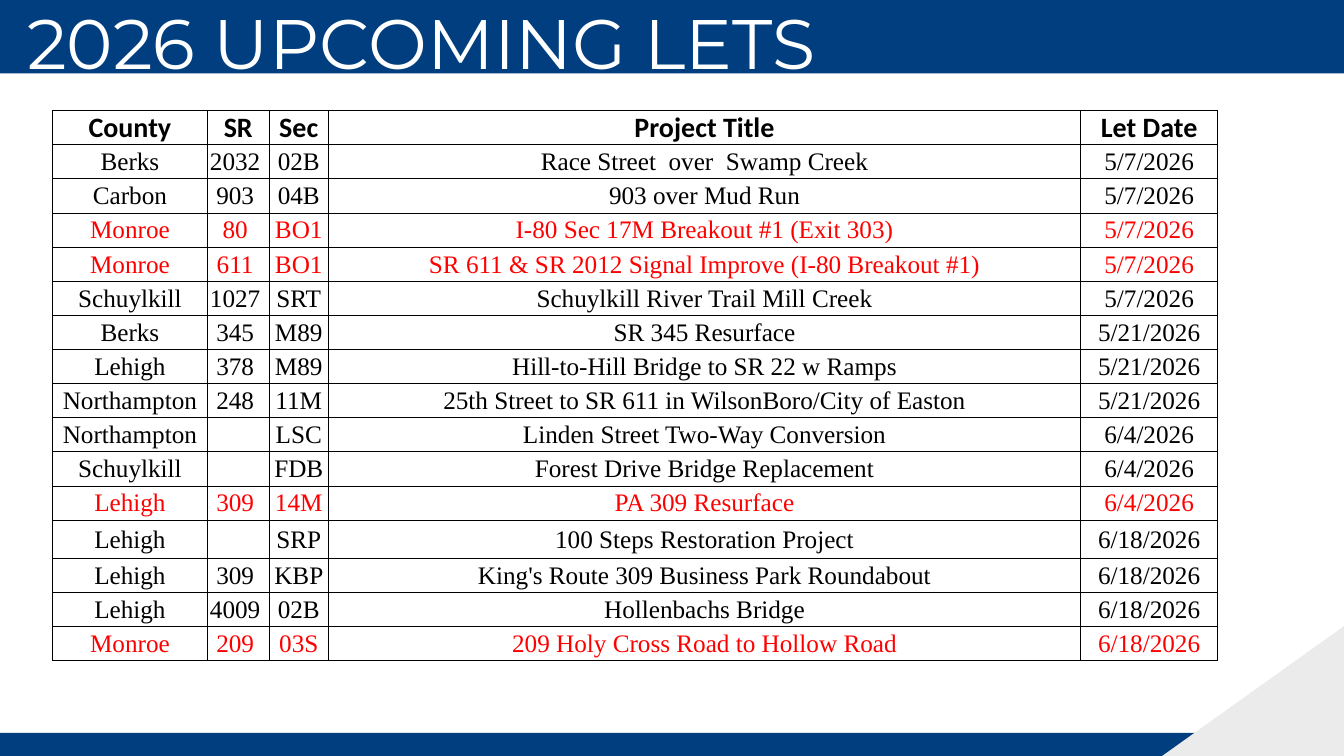
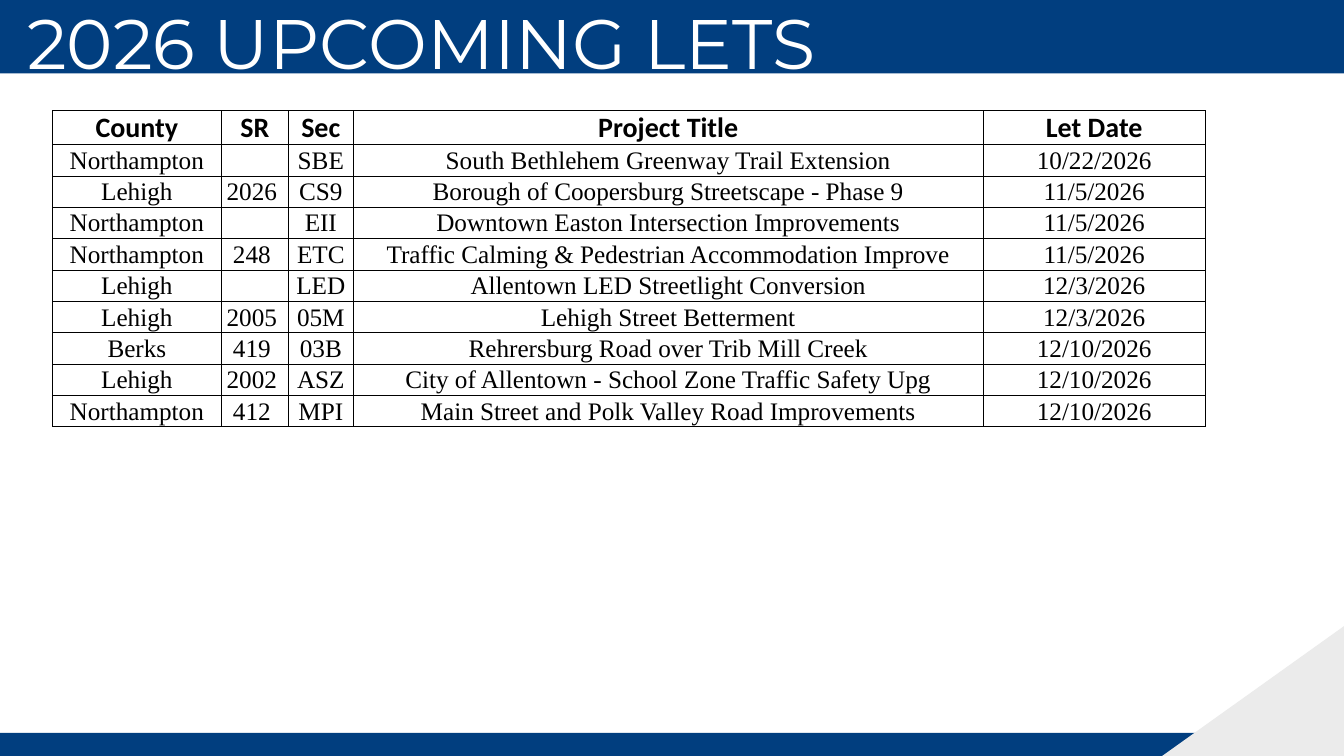
import pptx
import pptx.util
import pptx.dml.color
import pptx.enum.shapes
import pptx.enum.text
import pptx.oxml
import pptx.oxml.ns

Cm = pptx.util.Cm
Pt = pptx.util.Pt
ALIGN = pptx.enum.text.PP_ALIGN
ANCHOR = pptx.enum.text.MSO_ANCHOR
SHAPE = pptx.enum.shapes.MSO_SHAPE

COLORS = {"band": "013E7F", "corner": "EBEBEB", "title": "FFFFFF",
          "text": "000000", "highlight": "FF0000"}
WIDTH, HEIGHT = 33.87, 19.05
HEADER = ("County", "SR", "Sec", "Project Title", "Let Date")

SPRING_LETS = [
    ("Berks", "2032 ", "02B", "Race Street  over  Swamp Creek", "5/7/2026"),
    ("Carbon", "903 ", "04B", "903 over Mud Run", "5/7/2026"),
    ("Monroe", "80 ", "BO1", "I-80 Sec 17M Breakout #1 (Exit 303)", "5/7/2026"),
    ("Monroe", "611 ", "BO1", "SR 611 & SR 2012 Signal Improve (I-80 Breakout #1)", "5/7/2026"),
    ("Schuylkill", "1027 ", "SRT", "Schuylkill River Trail Mill Creek", "5/7/2026"),
    ("Berks", "345 ", "M89", "SR 345 Resurface", "5/21/2026"),
    ("Lehigh", "378 ", "M89", "Hill-to-Hill Bridge to SR 22 w Ramps", "5/21/2026"),
    ("Northampton", "248 ", "11M", "25th Street to SR 611 in WilsonBoro/City of Easton", "5/21/2026"),
    ("Northampton", "", "LSC", "Linden Street Two-Way Conversion", "6/4/2026"),
    ("Schuylkill", "", "FDB", "Forest Drive Bridge Replacement", "6/4/2026"),
    ("Lehigh", "309 ", "14M", "PA 309 Resurface", "6/4/2026"),
    ("Lehigh", "", "SRP", "100 Steps Restoration Project", "6/18/2026"),
    ("Lehigh", "309 ", "KBP", "King's Route 309 Business Park Roundabout", "6/18/2026"),
    ("Lehigh", "4009 ", "02B", "Hollenbachs Bridge", "6/18/2026"),
    ("Monroe", "209 ", "03S", "209 Holy Cross Road to Hollow Road", "6/18/2026"),
]
FALL_LETS = [
    ("Northampton", "", "SBE", "South Bethlehem Greenway Trail Extension", "10/22/2026"),
    ("Lehigh", "2026 ", "CS9", "Borough of Coopersburg Streetscape - Phase 9", "11/5/2026"),
    ("Northampton", "", "EII", "Downtown Easton Intersection Improvements", "11/5/2026"),
    ("Northampton", "248 ", "ETC", "Traffic Calming & Pedestrian Accommodation Improve", "11/5/2026"),
    ("Lehigh", "", "LED", "Allentown LED Streetlight Conversion", "12/3/2026"),
    ("Lehigh", "2005 ", "05M", "Lehigh Street Betterment", "12/3/2026"),
    ("Berks", "419 ", "03B", "Rehrersburg Road over Trib Mill Creek", "12/10/2026"),
    ("Lehigh", "2002 ", "ASZ", "City of Allentown - School Zone Traffic Safety Upg", "12/10/2026"),
    ("Northampton", "412 ", "MPI", "Main Street and Polk Valley Road Improvements", "12/10/2026"),
]


def rgb(name):
    return pptx.dml.color.RGBColor.from_string(COLORS[name])


def write(tf, text, size=18, font="Times New Roman", color="text", bold=False,
          align=ALIGN.CENTER, spacing=None):
    p = tf.paragraphs[0]
    p.alignment = align
    p.space_before = Pt(0)
    if spacing:
        p.line_spacing = spacing
    r = p.add_run()
    r.text = text
    r.font.size = Pt(size)
    r.font.name = font
    r.font.bold = bold
    r.font.color.rgb = rgb(color)


class Deck:
    """Holds the shared style and the slide being built."""

    def __init__(self):
        self.prs = pptx.Presentation()
        self.prs.slide_width, self.prs.slide_height = Cm(WIDTH), Cm(HEIGHT)
        self.layout = self.prs.slide_layouts[5]
        self.s = None

    def slide(self, title):
        first = self.s is None
        self.s = self.prs.slides.add_slide(self.layout)
        if first:
            self.backdrop()
        self.title(title)

    def backdrop(self):
        corner = self.shape(SHAPE.RIGHT_TRIANGLE, WIDTH - 4.58, HEIGHT - 3.27, 4.58, 3.27, "corner")
        corner.element.spPr.xfrm.set("flipH", "1")
        bands = [self.shape(SHAPE.RECTANGLE, 0, y, WIDTH, h, "band")
                 for y, h in ((HEIGHT - 0.58, 0.58), (0, 1.85))]
        for i, sp in enumerate([*bands, corner]):
            self.layout.shapes.element.insert(2 + i, sp.element)

    def shape(self, kind, x, y, w, h, color):
        sp = self.s.shapes.add_shape(kind, Cm(x), Cm(y), Cm(w), Cm(h))
        sp.shadow.inherit = False
        sp.fill.solid()
        sp.fill.fore_color.rgb = rgb(color)
        sp.line.fill.background()
        return sp

    def title(self, text):
        sp = self.s.shapes.title
        sp.left, sp.top, sp.width, sp.height = Cm(0.43), Cm(0.26), Cm(32.92), Cm(2.03)
        tf = sp.text_frame
        tf.auto_size = pptx.enum.text.MSO_AUTO_SIZE.NONE
        tf.word_wrap = True
        tf.vertical_anchor = ANCHOR.TOP
        write(tf, text, size=50, font="Montserrat", color="title",
              align=ALIGN.LEFT, spacing=0.8)

    def table(self, rows, widths, heights, highlighted=()):
        frame = self.s.shapes.add_table(len(rows) + 1, len(widths), Cm(1.32), Cm(2.78),
                                        Cm(sum(widths)), Cm(sum(heights)))
        table = frame.table
        table.first_row = table.horz_banding = False
        for column, width in zip(table.columns, widths):
            column.width = Cm(width)
        for i, (values, height) in enumerate(zip([HEADER, *rows], heights)):
            table.rows[i].height = Cm(height)
            if i == 0:
                style, inset = dict(size=20, font="Calibri", bold=True), 0
            else:
                style, inset = dict(color="highlight" if i in highlighted else "text"), 0.02
            for j, text in enumerate(values):
                self.cell(table.cell(i, j), text, inset, style)

    def cell(self, cell, text, inset, style):
        cell.margin_left = cell.margin_right = cell.margin_top = Cm(inset)
        cell.margin_bottom = 0
        cell.vertical_anchor = ANCHOR.MIDDLE
        cell.fill.background()
        write(cell.text_frame, text, **style)
        tcPr = cell._tc.get_or_add_tcPr()
        for i, side in enumerate("LRTB"):
            tcPr.insert(i, pptx.oxml.parse_xml(
                f'<a:ln{side} {pptx.oxml.ns.nsdecls("a")} w="{Pt(0.5)}"><a:solidFill>'
                f'<a:srgbClr val="{COLORS["text"]}"/></a:solidFill></a:ln{side}>'))


def main():
    deck = Deck()
    deck.slide("2026 UPCOMING LETS")
    deck.table(SPRING_LETS, (3.91, 1.55, 1.5, 18.95, 3.46),
               [0.86] * 12 + [0.96] + [0.86] * 3, highlighted=(3, 4, 11, 15))
    deck.slide("2026 UPCOMING LETS")
    deck.table(FALL_LETS, (4.26, 1.69, 1.63, 15.88, 5.59), [0.86] + [0.79] * 9)
    deck.prs.save("out.pptx")


if __name__ == "__main__":
    main()
